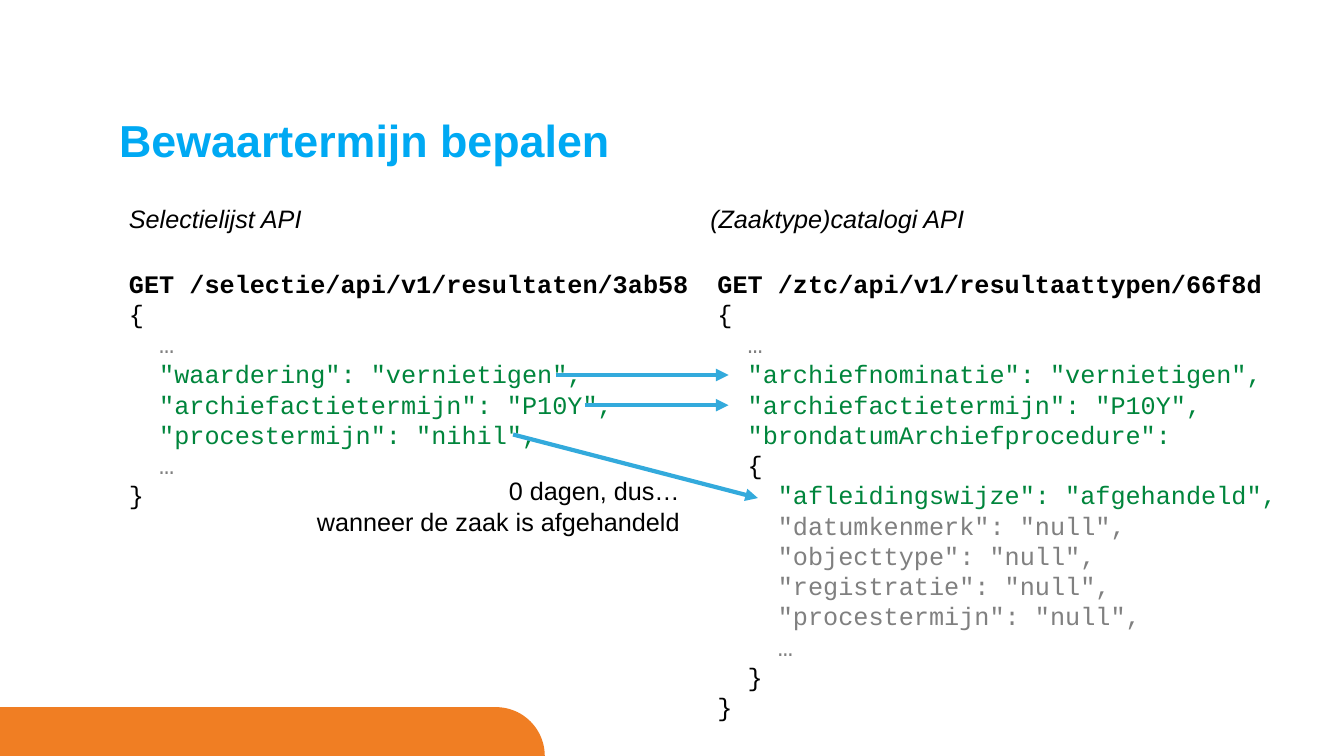
from math import cos, pi, sin

from lxml.etree import SubElement
from pptx import Presentation
from pptx.dml.color import RGBColor
from pptx.enum.shapes import MSO_CONNECTOR as Connector
from pptx.enum.text import MSO_ANCHOR as Anchor, MSO_AUTO_SIZE as AutoSize, PP_ALIGN as Align
from pptx.oxml.ns import qn
from pptx.util import Cm, Pt

BLACK, GREY, GREEN = "000000", "808080", "00853C"
TITLE_BLUE, ARROW_BLUE, ORANGE = "00A9F3", "33AADC", "F07E23"

SELECTION_CODE = [
    ("{", BLACK),
    ("  …", GREY),
    ('  "waardering": "vernietigen",', GREEN),
    ('  "archiefactietermijn": "P10Y",', GREEN),
    ('  "procestermijn": "nihil",', GREEN),
    ("  …", GREY),
    ("}", BLACK),
]
CATALOGUE_CODE = [
    ("{", BLACK),
    ("  …", GREY),
    ('  "archiefnominatie": "vernietigen",', GREEN),
    ('  "archiefactietermijn": "P10Y",', GREEN),
    ('  "brondatumArchiefprocedure":', GREEN),
    ("  {", BLACK),
    ('    "afleidingswijze": "afgehandeld",', GREEN),
    ('    "datumkenmerk": "null",', GREY),
    ('    "objecttype": "null",', GREY),
    ('    "registratie": "null",', GREY),
    ('    "procestermijn": "null",', GREY),
    ("    …", GREY),
    ("  }", BLACK),
    ("}", BLACK),
]


def rgb(color):
    return RGBColor.from_string(color)


def write(frame, text, size=18, font="Arial", color=BLACK, bold=False,
          italic=False, align=Align.LEFT, line_spacing=None):
    """Fill the empty first paragraph, or add a paragraph below the others."""
    first = frame.paragraphs[0]
    paragraph = frame.add_paragraph() if first.runs else first
    paragraph.alignment = align
    paragraph.line_spacing = line_spacing
    run = paragraph.add_run()
    run.text = text
    run.font.size, run.font.name = Pt(size), font
    run.font.bold, run.font.italic = bold, italic
    run.font.color.rgb = rgb(color)


def text_frame(slide, left, top, width, height):
    frame = slide.shapes.add_textbox(Cm(left), Cm(top), Cm(width), Cm(height)).text_frame
    frame.word_wrap = True
    return frame


def add_title(slide, text, left, top, width, height):
    title = slide.shapes.title
    title.left, title.top, title.width, title.height = map(Cm, (left, top, width, height))
    frame = title.text_frame
    frame.margin_left = frame.margin_right = frame.margin_top = frame.margin_bottom = 0
    frame.vertical_anchor = Anchor.TOP
    frame.auto_size = AutoSize.NONE
    write(frame, text, size=32, color=TITLE_BLUE, bold=True, line_spacing=0.9)


def add_footer_band(slide, left, top, width, height):
    """Band whose top right corner is a full quarter circle."""
    right, bottom = left + width, top + height
    angles = [pi / 2 * step / 24 for step in range(25)]
    arc = [(right - height + height * sin(a), bottom - height * cos(a)) for a in angles]
    outline = [(Cm(x), Cm(y)) for x, y in [(left, top), *arc, (left, bottom)]]
    builder = slide.shapes.build_freeform(*outline[0])
    builder.add_line_segments(outline[1:], close=True)
    band = builder.convert_to_shape()
    band.shadow.inherit = False
    band.fill.solid()
    band.fill.fore_color.rgb = rgb(ORANGE)
    band.line.fill.background()


def add_api_panel(slide, heading, request, code, left, top, width, height, heading_shift=0):
    """API name in italics, with the request and its response below."""
    write(text_frame(slide, left + heading_shift, top, 8.2, 1.02), heading, italic=True)
    frame = text_frame(slide, left, top + 1.63, width, height - 1.63)
    write(frame, request, font="Courier New", bold=True)
    for line, color in code:
        write(frame, line, font="Courier New", color=color)


def add_arrow(slide, *ends):
    arrow = slide.shapes.add_connector(Connector.STRAIGHT, *map(Cm, ends))
    arrow.line.color.rgb = rgb(ARROW_BLUE)
    arrow.line.width = Pt(3)
    SubElement(arrow.line._get_or_add_ln(), qn("a:tailEnd"), type="triangle")
    SubElement(arrow._element.spPr, qn("a:effectLst"))


def add_note(slide, lines, left, top, width, height):
    frame = text_frame(slide, left, top, width, height)
    for line in lines:
        write(frame, line, align=Align.RIGHT)


def main():
    deck = Presentation()
    deck.slide_width, deck.slide_height = Cm(33.87), Cm(19.05)
    slide = deck.slides.add_slide(deck.slide_layouts[5])

    # Footer and title
    add_footer_band(slide, 0, 17.82, 13.73, 1.23)
    add_title(slide, "Bewaartermijn bepalen", 3, 3, 27.86, 2)

    # The two APIs side by side
    add_api_panel(slide, "Selectielijst API", "GET /selectie/api/v1/resultaten/3ab58",
                  SELECTION_CODE, 3, 5, 14.83, 8.82)
    add_api_panel(slide, "(Zaaktype)catalogi API", "GET /ztc/api/v1/resultaattypen/66f8d",
                  CATALOGUE_CODE, 17.83, 5, 14.83, 14.2, heading_shift=-0.18)

    # Arrows between matching fields
    add_arrow(slide, 14, 9.45, 18.36, 9.45)
    add_arrow(slide, 14.73, 10.21, 18.36, 10.21)
    add_arrow(slide, 12.93, 10.95, 19.1, 12.55)

    # Explanation of the last arrow
    add_note(slide, ["0 dagen, dus…", "wanneer de zaak is afgehandeld"], 4.55, 11.86, 12.83, 1.8)

    deck.save("out.pptx")


if __name__ == "__main__":
    main()
